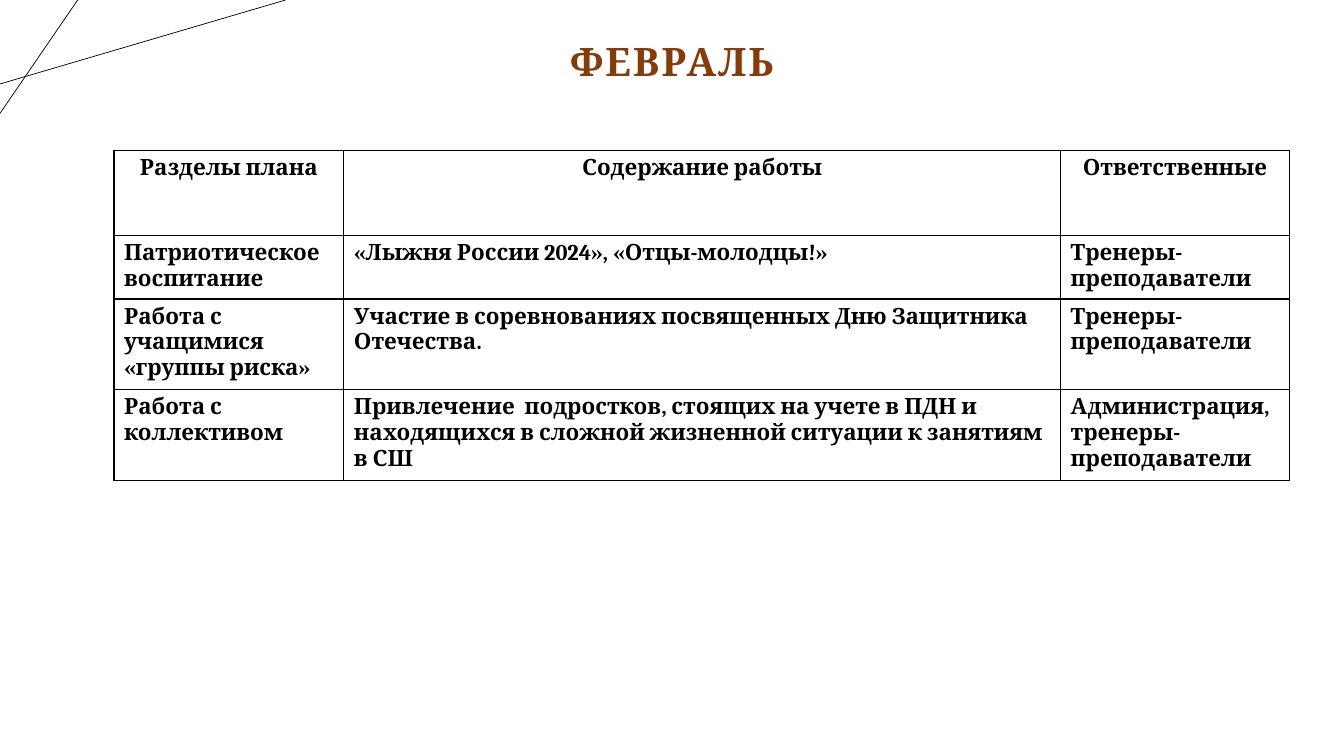
from lxml import etree
from pptx import Presentation
from pptx.dml.color import RGBColor
from pptx.enum.shapes import MSO_CONNECTOR
from pptx.enum.text import MSO_ANCHOR, PP_ALIGN
from pptx.oxml.ns import qn
from pptx.util import Pt

# Content
TITLE = "ФЕВРАЛЬ"
ROWS = [
    ("Разделы плана", "Содержание работы", "Ответственные"),
    ("Патриотическое воспитание",
     "«Лыжня России 2024», «Отцы-молодцы!»",
     "Тренеры-преподаватели"),
    ("Работа с учащимися «группы риска»",
     "Участие в соревнованиях посвященных Дню Защитника Отечества.",
     "Тренеры-преподаватели"),
    ("Работа с коллективом",
     "Привлечение  подростков, стоящих на учете в ПДН и находящихся "
     "в сложной жизненной ситуации к занятиям в СШ",
     "Администрация, тренеры-преподаватели"),
]

# Layout in points
WIDE, HIGH = 960, 540
RAYS = [(0, 60, 204, 0), (55.5, 0, 0, 81)]
HEAD = (66, 18.75, 828, 53.25)
LEFT, TOP = 81.4, 107.5
COLS = [164.2, 512, 163.5]
TALL, LOW = 60.5, 44.6

# Style
FONT = "Cambria"
BLACK = RGBColor(0x00, 0x00, 0x00)
BROWN = RGBColor(0x84, 0x3C, 0x0B)
STRAIGHT = MSO_CONNECTOR.STRAIGHT
MIDDLE = MSO_ANCHOR.MIDDLE
CENTER, START = PP_ALIGN.CENTER, PP_ALIGN.LEFT


def style(para, size, color, align):
    para.alignment = align
    font = para.font
    font.name, font.size, font.bold = FONT, Pt(size), True
    font.color.rgb = color


def border(cell):
    props = cell._tc.get_or_add_tcPr()
    for n, side in enumerate(("a:lnL", "a:lnR", "a:lnT", "a:lnB")):
        line = etree.Element(qn(side), w=str(Pt(1)))
        fill = etree.SubElement(line, qn("a:solidFill"))
        etree.SubElement(fill, qn("a:srgbClr"), val=str(BLACK))
        props.insert(n, line)


deck = Presentation()
deck.slide_width, deck.slide_height = Pt(WIDE), Pt(HIGH)
slide = deck.slides.add_slide(deck.slide_layouts[6])
shapes = slide.shapes

# Corner lines
for ray in RAYS:
    line = shapes.add_connector(STRAIGHT, *map(Pt, ray))
    line.line.color.rgb = BLACK
    line.line.width = Pt(0.5)
    etree.SubElement(line._element.spPr, qn("a:effectLst"))

# Title
frame = shapes.add_textbox(*map(Pt, HEAD)).text_frame
frame.word_wrap = True
frame.vertical_anchor = MIDDLE
para = frame.paragraphs[0]
run = para.add_run()
run.text = TITLE
style(para, 28, BROWN, CENTER)
para.line_spacing = 0.9
run._r.get_or_add_rPr().set("spc", "150")

# Plan table
tall = [TALL] + [LOW] * (len(ROWS) - 1)
table = shapes.add_table(len(ROWS), len(COLS), Pt(LEFT), Pt(TOP),
                         Pt(sum(COLS)), Pt(sum(tall))).table
table.first_row = table.horz_banding = False
for col, width in zip(table.columns, COLS):
    col.width = Pt(width)
for r, texts in enumerate(ROWS):
    table.rows[r].height = Pt(tall[r])
    for c, text in enumerate(texts):
        cell = table.cell(r, c)
        cell.text = text
        cell.fill.background()
        border(cell)
        style(cell.text_frame.paragraphs[0], 16, BLACK,
              START if r else CENTER)

deck.save("out.pptx")
